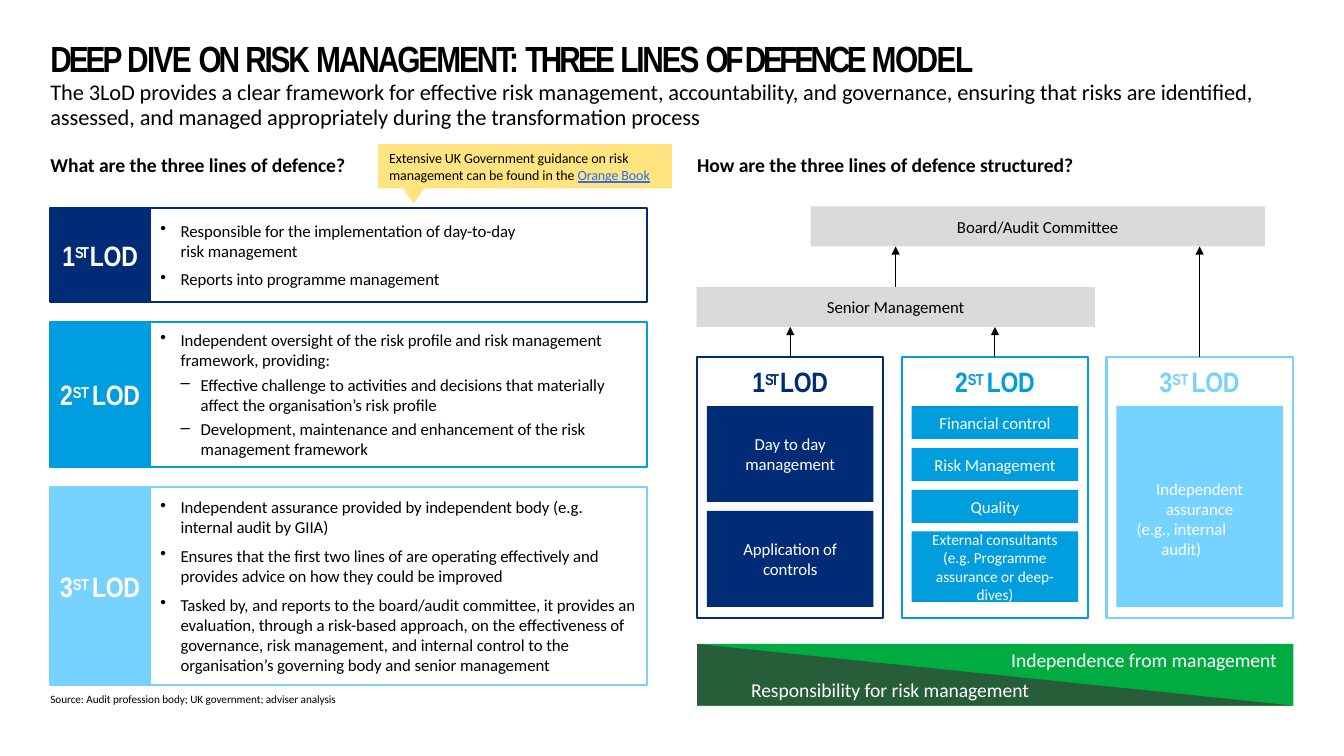
from pptx import Presentation
from pptx.dml.color import RGBColor
from pptx.enum.shapes import MSO_CONNECTOR, MSO_SHAPE
from pptx.enum.text import MSO_ANCHOR, PP_ALIGN
from pptx.oxml.ns import qn
from pptx.util import Pt
from lxml import etree

RECT, TRIANGLE = MSO_SHAPE.RECTANGLE, MSO_SHAPE.RIGHT_TRIANGLE
STRAIGHT = MSO_CONNECTOR.STRAIGHT
TOP, MIDDLE = MSO_ANCHOR.TOP, MSO_ANCHOR.MIDDLE
LEFT, CENTER, RIGHT = PP_ALIGN.LEFT, PP_ALIGN.CENTER, PP_ALIGN.RIGHT

BLACK = RGBColor(0x00, 0x00, 0x00)
WHITE = RGBColor(0xFF, 0xFF, 0xFF)
NAVY = RGBColor(0x00, 0x2C, 0x77)
BLUE = RGBColor(0x00, 0x9D, 0xDF)
SKY = RGBColor(0x76, 0xD2, 0xFF)
GREY = RGBColor(0xDA, 0xDA, 0xDA)
YELLOW = RGBColor(0xFF, 0xE4, 0x80)
LINK = RGBColor(0x2C, 0x6D, 0xF1)
GREEN = RGBColor(0x00, 0xAC, 0x41)
FOREST = RGBColor(0x27, 0x5D, 0x38)

TITLE = [("DEEP ", -2.2), ("DIVE ", -1.2), ("ON ", -2.3), ("RISK ", -1.6),
         ("MANAGEMENT: ", -1.5), ("THREE ", -2.1), ("LINES ", -1.6),
         ("OF DEFENCE ", -2.5), ("MODEL", -1.1)]
SUBTITLE = ("The 3LoD provides a clear framework for effective risk management, "
            "accountability, and governance, ensuring that risks are identified, "
            "assessed, and managed appropriately during the transformation process")

LINES = [
    ("1", NAVY, 67, [
        (0, "Responsible for the implementation of day-to-day\nrisk management"),
        (0, "Reports into programme management")]),
    ("2", BLUE, 104, [
        (0, "Independent oversight of the risk profile and risk management "
            "framework, providing:"),
        (1, "Effective challenge to activities and decisions that materially\n"
            "affect the organisation’s risk profile"),
        (1, "Development, maintenance and enhancement of the risk "
            "management framework")]),
    ("3", SKY, 141, [
        (0, "Independent assurance provided by independent body (e.g.\n"
            "internal audit by GIIA)"),
        (0, "Ensures that the first two lines of are operating effectively and "
            "provides advice on how they could be improved"),
        (0, "Tasked by, and reports to the board/audit committee, it provides an "
            "evaluation, through a risk-based approach, on the effectiveness of "
            "governance, risk management, and internal control to the "
            "organisation’s governing body and senior management")]),
]

COLUMNS = [
    [("Day to day\nmanagement", 290, 68.5, 12),
     ("Application of\ncontrols", 365, 68.5, 12)],
    [("Financial control", 290, 23.5, 12),
     ("Risk Management", 320, 23.5, 12),
     ("Quality", 350, 23.5, 12),
     ("External consultants\n(e.g. Programme\nassurance or deep-\ndives)",
      379.5, 50.5, 11)],
    [("Independent\nassurance", 290, 143.5, 12)],
]


def add_run(p, text, size, color, font="Calibri", bold=False, spc=-0.05):
    for i, part in enumerate(text.split("\n")):
        if i:
            p.add_line_break()
        r = p.add_run()
        r.text = part
        r.font.size, r.font.name, r.font.bold = Pt(size), font, bold
        r.font.color.rgb = color
        r._r.get_or_add_rPr().set("spc", str(round(spc * 100)))
    return r


def set_frame(sp, anchor, align):
    tf = sp.text_frame
    tf.word_wrap = True
    tf.margin_left = tf.margin_top = tf.margin_right = tf.margin_bottom = 0
    tf.vertical_anchor = anchor
    tf.paragraphs[0].alignment = align
    return tf


def add_text(s, x, y, w, h, text="", size=12, color=BLACK, bold=False, align=LEFT):
    sp = s.shapes.add_textbox(Pt(x), Pt(y), Pt(w), Pt(h))
    p = set_frame(sp, TOP, align).paragraphs[0]
    if text:
        add_run(p, text, size, color, bold=bold)
    return p


def style(sp, fill=None, line=None):
    sp.shadow.inherit = False
    if fill is None:
        sp.fill.background()
    else:
        sp.fill.solid()
        sp.fill.fore_color.rgb = fill
    if line is None:
        sp.line.fill.background()
    else:
        sp.line.color.rgb = line
        sp.line.width = Pt(1.5)


def add_box(s, x, y, w, h, fill=None, line=None, text="", size=12, color=WHITE, shape=RECT):
    sp = s.shapes.add_shape(shape, Pt(x), Pt(y), Pt(w), Pt(h))
    style(sp, fill, line)
    p = set_frame(sp, MIDDLE, CENTER).paragraphs[0]
    if text:
        add_run(p, text, size, color)
    return sp


def add_lod_label(p, number, color):
    first = number == "1"
    add_run(p, number, 20, color, "Arial Narrow", True, -1.2 if first else -0.2)
    r = add_run(p, "ST ", 19.5, color, "Arial Narrow", True, -1.9 if first else -0.4)
    r._r.get_or_add_rPr().set("baseline", "26000")
    add_run(p, "LOD", 20, color, "Arial Narrow", True, -0.2)


def add_bullets(tf, items):
    for i, (level, text) in enumerate(items):
        p = tf.add_paragraph() if i else tf.paragraphs[0]
        p.alignment = LEFT
        if i:
            p.space_before = Pt(3 if level else 6)
        pPr = p._p.get_or_add_pPr()
        pPr.set("marL", str(Pt(22 + 14.4 * level)))
        pPr.set("indent", str(-Pt(14.4)))
        etree.SubElement(pPr, qn("a:buChar")).set("char", "•–"[level])
        add_run(p, text, 12, BLACK)


def add_arrow(s, source, x, y):
    c = s.shapes.add_connector(STRAIGHT, Pt(x), source.top, Pt(x), Pt(y))
    c.begin_connect(source, 0)
    c.line.color.rgb = BLACK
    c.line.width = Pt(0.75)
    etree.SubElement(c.line._get_or_add_ln(), qn("a:tailEnd")).set("type", "triangle")
    etree.SubElement(c._element.spPr, qn("a:effectLst"))


def add_callout(s):
    fb = s.shapes.build_freeform(Pt(270), Pt(103))
    fb.add_line_segments([(Pt(x), Pt(y)) for x, y in (
        (480, 103), (480, 134.5), (303, 134.5), (295.5, 145.5),
        (288, 134.5), (270, 134.5))])
    sp = fb.convert_to_shape()
    style(sp, YELLOW)
    tf = set_frame(sp, TOP, LEFT)
    tf.margin_left, tf.margin_top = Pt(8), Pt(3.8)
    p = tf.paragraphs[0]
    add_run(p, "Extensive UK Government guidance on risk\n"
               "management can be found in the ", 10, BLACK)
    add_run(p, "Orange Book", 10, LINK).font.underline = True


def add_line_cards(s):
    y = 148.5
    for number, color, h, items in LINES:
        body = add_box(s, 107, y, 355, h, line=color)
        tf = body.text_frame
        tf.margin_right = Pt(1)
        add_bullets(tf, items)
        tag = add_box(s, 36, y, 71, h, color, color)
        add_lod_label(tag.text_frame.paragraphs[0], number, WHITE)
        y += h + 14.3


def add_structure(s):
    add_box(s, 579, 147.5, 324.5, 28.5, GREY, text="Board/Audit Committee", color=BLACK)
    senior = add_box(s, 497.5, 205, 284.5, 28.5, GREY, text="Senior Management", color=BLACK)
    add_arrow(s, senior, 639.75, 176)
    for i, ((number, color, _, _), blocks) in enumerate(zip(LINES, COLUMNS)):
        x = 498 + 146.2 * i
        card = add_box(s, x, 255, 133, 186.5, line=color)
        tf = card.text_frame
        tf.vertical_anchor, tf.margin_top = TOP, Pt(5.5)
        add_lod_label(tf.paragraphs[0], number, color)
        add_arrow(s, card, x + 66.5, 176 if number == "3" else 233.5)
        for text, y, h, size in blocks:
            block = add_box(s, x + 7, y, 119, h, color, text=text, size=size)
    tf = block.text_frame
    tf.margin_top = Pt(18)
    p = tf.add_paragraph()
    p.alignment = CENTER
    p._p.get_or_add_pPr().set("marR", str(Pt(26)))
    add_run(p, "(e.g., internal\naudit)", 12, WHITE)


def add_wedge(s):
    add_box(s, 498, 460, 426, 44, GREEN)
    add_box(s, 498, 460, 426, 44, FOREST, shape=TRIANGLE)
    add_text(s, 660, 462.5, 252, 18, "Independence from management", 14, WHITE, align=RIGHT)
    add_text(s, 536.5, 484, 230, 18, "Responsibility for risk management", 14, WHITE)


def main():
    prs = Presentation()
    prs.slide_width, prs.slide_height = Pt(960), Pt(540)
    s = prs.slides.add_slide(prs.slide_layouts[6])
    p = add_text(s, 36, 26, 888, 32)
    for text, spc in TITLE:
        add_run(p, text, 26, BLACK, "Arial Narrow", True, spc)
    p = add_text(s, 36, 58, 876, 36, SUBTITLE, 16)
    p.line_spacing = Pt(17.3)
    add_text(s, 36, 109.5, 225, 19, "What are the three lines of defence?", 14, bold=True)
    add_text(s, 498, 109.5, 280, 19, "How are the three lines of defence structured?", 14, bold=True)
    add_callout(s)
    add_line_cards(s)
    add_structure(s)
    add_wedge(s)
    add_text(s, 36, 494.5, 230, 11,
             "Source: Audit profession body; UK government; adviser analysis", 8)
    prs.save("out.pptx")


if __name__ == "__main__":
    main()
